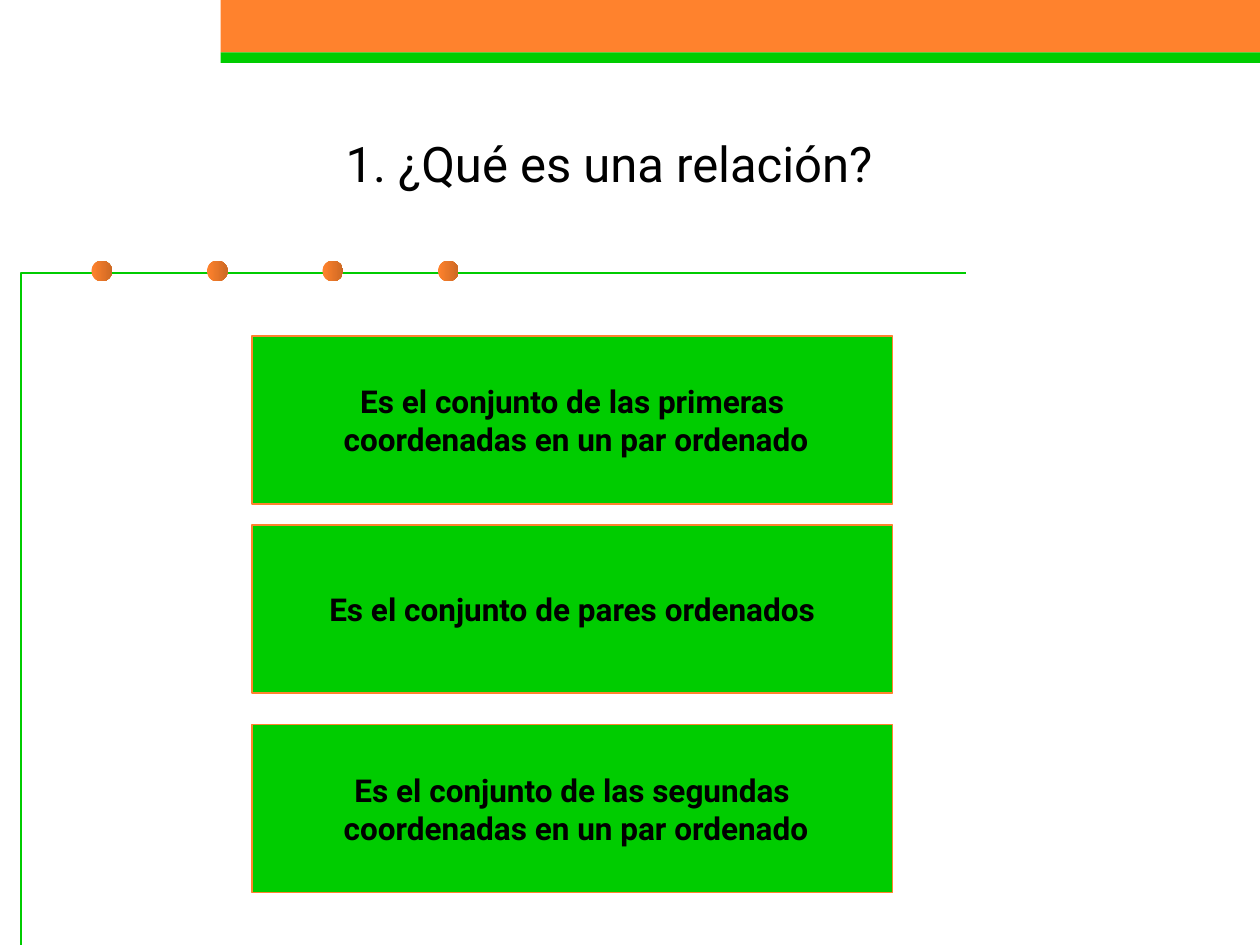
from pptx import Presentation
from pptx.dml.color import RGBColor
from pptx.enum.shapes import MSO_SHAPE
from pptx.enum.text import MSO_ANCHOR, PP_ALIGN
from pptx.util import Pt

ORANGE, GREEN, BLACK = "FF822D", "00CC00", "000000"
ANSWERS = [
    (192, ["Es el conjunto de las primeras", " coordenadas en un par ordenado"]),
    (300, ["Es el conjunto de pares ordenados"]),
    (414, ["Es el conjunto de las segundas", " coordenadas en un par ordenado"]),
]


def rgb(color):
    """Turn a hex string into a colour."""
    return RGBColor.from_string(color)


def add_shape(s, kind, x, y, w, h, fill=None, line=None):
    """Add a flat preset shape with an optional fill and outline."""
    sp = s.shapes.add_shape(kind, Pt(x), Pt(y), Pt(w), Pt(h))
    sp.shadow.inherit = False
    if fill:
        sp.fill.solid()
        sp.fill.fore_color.rgb = rgb(fill)
    if line:
        sp.line.color.rgb = rgb(line)
        sp.line.width = Pt(1)
    else:
        sp.line.fill.background()
    return sp


def write_lines(sp, lines, size, bold=False, wrap=False):
    """Write centred lines, one paragraph each."""
    tf = sp.text_frame
    tf.word_wrap = wrap
    tf.vertical_anchor = MSO_ANCHOR.MIDDLE
    for i, line in enumerate(lines):
        p = tf.add_paragraph() if i else tf.paragraphs[0]
        p.alignment = PP_ALIGN.CENTER
        r = p.add_run()
        r.text = line
        r.font.name = "Roboto"
        r.font.size = Pt(size)
        r.font.bold = bold
        r.font.color.rgb = rgb(BLACK)


def add_banner(s, x, y, w, h):
    """Draw the orange band with its green strip below."""
    strip = 6
    add_shape(s, MSO_SHAPE.RECTANGLE, x, y, w, h - strip, ORANGE)
    add_shape(s, MSO_SHAPE.RECTANGLE, x, y + h - strip, w, strip, GREEN)


def add_frame(s, x, y, w, h):
    """Draw the green corner line and the row of dots on its top edge."""
    builder = s.shapes.build_freeform(x, y + h, scale=Pt(1))
    builder.add_line_segments([(x, y), (x + w, y)], close=False)
    sp = builder.convert_to_shape()
    sp.shadow.inherit = False
    sp.fill.background()
    sp.line.color.rgb = rgb(GREEN)
    sp.line.width = Pt(0.75)
    size, pitch = 11.8, 66
    for i in range(4):
        dot = add_shape(s, MSO_SHAPE.OVAL, x + 40.3 + i * pitch, y - 7, size, size)
        dot.fill.gradient()
        dot.fill.gradient_angle = 0
        for stop, color in zip(dot.fill.gradient_stops, (ORANGE, "CD6924")):
            stop.color.rgb = rgb(color)


def add_title(s, x, y, w, h):
    """Place the question."""
    sp = s.shapes.add_textbox(Pt(x), Pt(y), Pt(w), Pt(h))
    write_lines(sp, ["1. ¿Qué es una relación?"], 28, wrap=True)


def add_answer(s, x, y, w, h, lines):
    """Draw one answer button."""
    sp = add_shape(s, MSO_SHAPE.ACTION_BUTTON_CUSTOM, x, y, w, h, GREEN, ORANGE)
    write_lines(sp, lines, 18, bold=True)


def main():
    """Build the slide and save it."""
    prs = Presentation()
    prs.slide_width, prs.slide_height = Pt(720), Pt(540)
    s = prs.slides.add_slide(prs.slide_layouts[6])
    add_banner(s, 126, 0, 594, 36)
    add_frame(s, 12, 156, 540, 384)
    add_title(s, 42, 48, 612, 90)
    for y, lines in ANSWERS:
        add_answer(s, 144, y, 366, 96, lines)
    prs.save("out.pptx")


if __name__ == "__main__":
    main()
